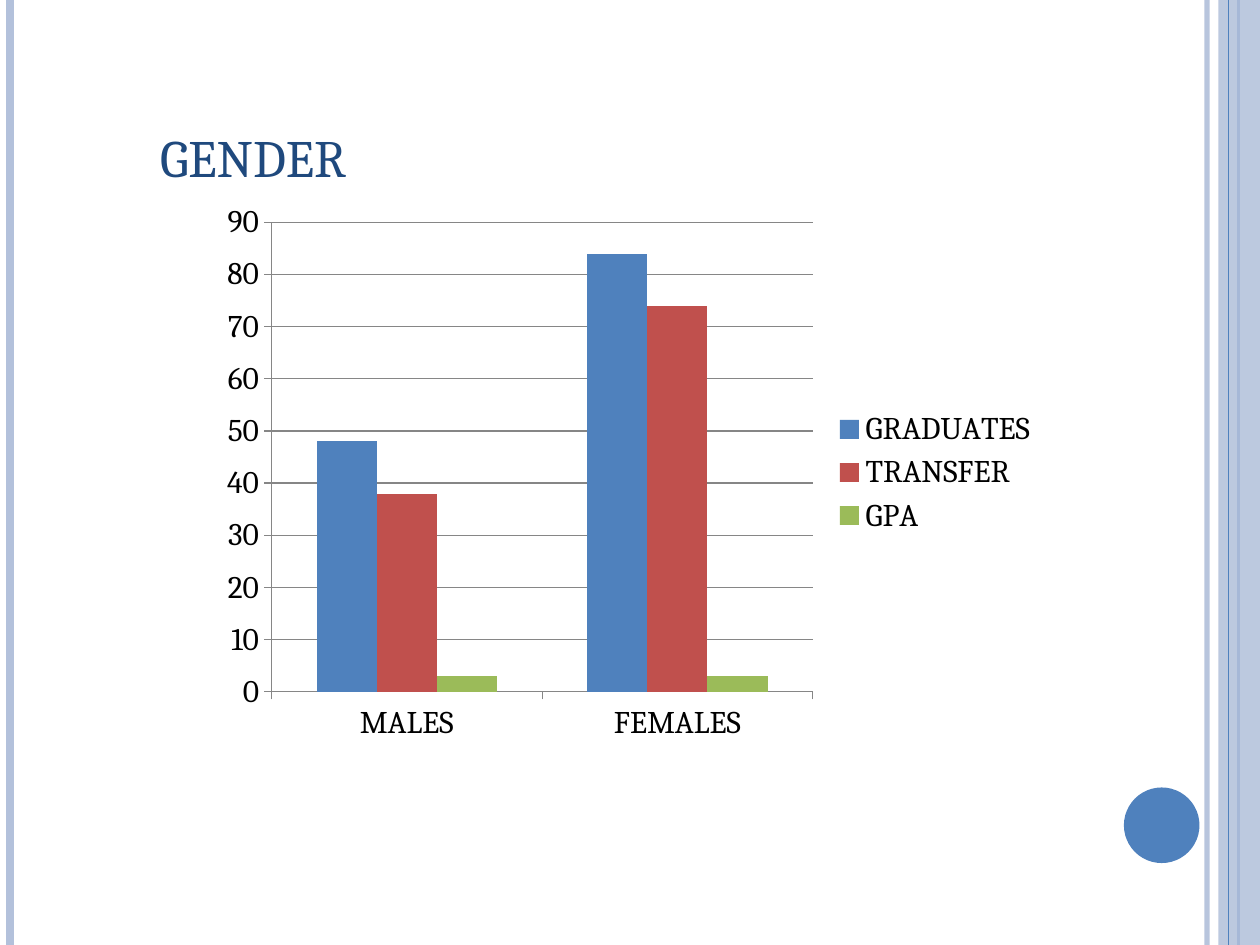
from lxml import etree
from pptx import Presentation
from pptx.chart.data import CategoryChartData
from pptx.dml.color import RGBColor
from pptx.enum.chart import XL_CHART_TYPE, XL_LEGEND_POSITION, XL_TICK_MARK
from pptx.enum.shapes import MSO_CONNECTOR, MSO_SHAPE
from pptx.enum.text import MSO_ANCHOR, PP_ALIGN
from pptx.oxml.ns import qn
from pptx.util import Inches, Pt

COLUMNS = XL_CHART_TYPE.COLUMN_CLUSTERED
LEGEND_RIGHT = XL_LEGEND_POSITION.RIGHT
TICK_OUT = XL_TICK_MARK.OUTSIDE
STRAIGHT = MSO_CONNECTOR.STRAIGHT
RECTANGLE, OVAL = MSO_SHAPE.RECTANGLE, MSO_SHAPE.OVAL
BOTTOM, LEFT = MSO_ANCHOR.BOTTOM, PP_ALIGN.LEFT

# Content
TITLE = "GENDER"
CATEGORIES = ["MALES", "FEMALES"]
SERIES = [
    ("GRADUATES", (48, 84), "4F81BD"),
    ("TRANSFER", (38, 74), "C0504D"),
    ("GPA", (3, 3), "9BBB59"),
]

# Look
WIDTH, HEIGHT = 10, 7.5
BLUE, PALE, GRAY = "4F81BD", "B3C1DB", "868686"
LINES_BELOW = [  # x, colour, points, opacity in percent
    (9.58, PALE, 3, 93),
    (0.08, PALE, 4.5, 100),
    (9.83, BLUE, 1.5, 100),
]
LINES_ABOVE = [(9.75, BLUE, 0.75, 100)]
BAND = (9.67, 0, 0.33, HEIGHT)
CIRCLE = (8.92, 6.25, 0.6, 0.6)
TITLE_BOX = (1.17, 0.83, 7.68, 0.71)
CHART_BOX = (1.67, 1.53, 6.67, 4.44)


def color(value):
    return RGBColor.from_string(value)


def inches(lengths):
    return [Inches(length) for length in lengths]


def set_font(font, size, shade):
    formats = {"name": "Cambria", "size": Pt(size), "bold": False}
    for name, value in formats.items():
        setattr(font, name, value)
    font.color.rgb = color(shade)


def set_opacity(fill_owner, percent):
    if percent < 100:
        for tint in fill_owner.iter(qn("a:srgbClr")):
            etree.SubElement(tint, qn("a:alpha"), val=str(percent * 1000))


def add_vertical_lines(page, lines):
    for x, shade, points, opacity in lines:
        line = page.shapes.add_connector(STRAIGHT, *inches((x, 0, x, HEIGHT)))
        line.line.color.rgb = color(shade)
        line.line.width = Pt(points)
        properties = line._element.spPr
        set_opacity(properties, opacity)
        etree.SubElement(properties, qn("a:effectLst"))


def add_plain_shape(page, kind, place, shade, opacity=100):
    shape = page.shapes.add_shape(kind, *inches(place))
    shape.shadow.inherit = False
    shape.fill.solid()
    shape.fill.fore_color.rgb = color(shade)
    shape.line.fill.background()
    set_opacity(shape._element.spPr, opacity)


def fill_title(page):
    title = page.shapes.title
    title.left, title.top, title.width, title.height = inches(TITLE_BOX)
    title.text_frame.text = TITLE
    title.text_frame.vertical_anchor = BOTTOM
    para = title.text_frame.paragraphs[0]
    para.alignment = LEFT
    set_font(para.runs[0].font, 30, "1F497D")


def add_gender_chart(page):
    data = CategoryChartData()
    data.categories = CATEGORIES
    for name, values, _ in SERIES:
        data.add_series(name, values)
    chart = page.shapes.add_chart(COLUMNS, *inches(CHART_BOX), data).chart
    set_font(chart.font, 18, "000000")
    chart.has_title = False
    chart.has_legend = True
    chart.legend.position = LEGEND_RIGHT
    chart.legend.include_in_layout = False

    plot = chart.plots[0]
    plot.gap_width, plot.overlap, plot.vary_by_categories = 150, 0, False
    for series, (_, _, shade) in zip(plot.series, SERIES):
        series.format.fill.solid()
        series.format.fill.fore_color.rgb = color(shade)

    # Axes and gridlines
    scale = chart.value_axis
    scale.minimum_scale, scale.maximum_scale, scale.major_unit = 0, 90, 10
    scale.has_major_gridlines = True
    for axis in (chart.category_axis, scale):
        axis.major_tick_mark = TICK_OUT
    for part in (chart.category_axis, scale, scale.major_gridlines):
        part.format.line.color.rgb = color(GRAY)
        part.format.line.width = Pt(0.75)


def main():
    deck = Presentation()
    deck.slide_width, deck.slide_height = inches((WIDTH, HEIGHT))
    page = deck.slides.add_slide(deck.slide_layouts[5])

    # Side decoration, back to front
    add_vertical_lines(page, LINES_BELOW)
    add_plain_shape(page, RECTANGLE, BAND, PALE, 87)
    add_vertical_lines(page, LINES_ABOVE)
    add_plain_shape(page, OVAL, CIRCLE, BLUE)

    fill_title(page)
    add_gender_chart(page)
    deck.save("out.pptx")


if __name__ == "__main__":
    main()
